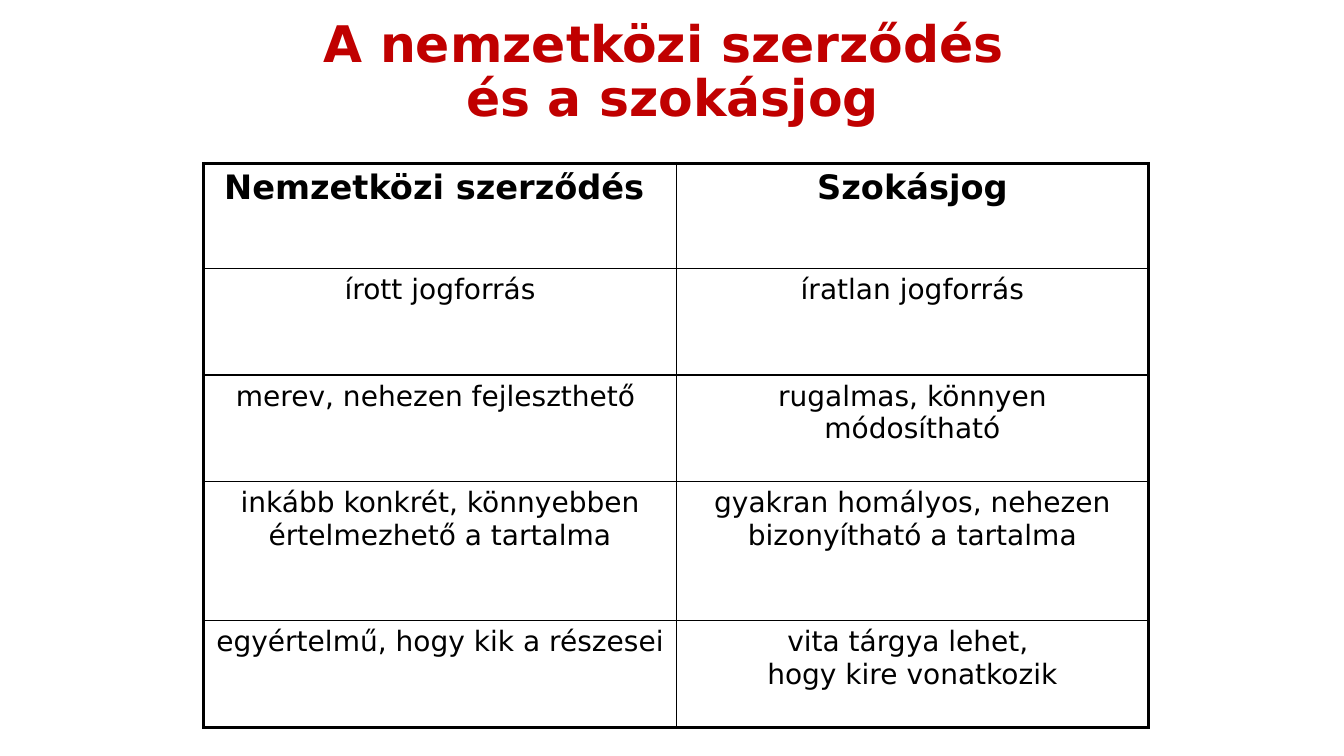
from lxml import etree
from pptx import Presentation
from pptx.dml.color import RGBColor
from pptx.enum.text import MSO_ANCHOR, PP_ALIGN
from pptx.oxml.ns import qn
from pptx.util import Inches, Pt

CENTER = PP_ALIGN.CENTER
MIDDLE = MSO_ANCHOR.MIDDLE
TITLE_ONLY = 5
FONT = "DejaVu Sans"
RED = "C00000"
BLACK = "000000"
OUTER, INNER = 2.25, 1

COLUMN_WIDTHS = [4.69, 4.68]
ROW_HEIGHTS = [1.04, 1.06, 1.06, 1.38, 1.06]
COMPARISON = [
    ("Nemzetközi szerződés ", "Szokásjog"),
    ("írott jogforrás", "íratlan jogforrás"),
    ("merev, nehezen fejleszthető ", "rugalmas, könnyen módosítható"),
    ("inkább konkrét, könnyebben értelmezhető a tartalma",
     "gyakran homályos, nehezen bizonyítható a tartalma"),
    ("egyértelmű, hogy kik a részesei",
     "vita tárgya lehet, \nhogy kire vonatkozik"),
]


def color(value):
    return RGBColor.from_string(value)


def format_text(frame, size, bold, text_color):
    for paragraph in frame.paragraphs:
        paragraph.alignment = CENTER
        paragraph.font.name = FONT
        paragraph.font.size = Pt(size)
        paragraph.font.bold = bold
        paragraph.font.color.rgb = color(text_color)


def add_title(slide, text):
    title = slide.shapes.title
    title.left, title.top = Inches(1.67), Inches(0)
    title.width, title.height = Inches(10), Inches(1.45)
    frame = title.text_frame
    frame.text = text
    frame.word_wrap = True
    frame.vertical_anchor = MIDDLE
    format_text(frame, 36, True, RED)
    frame.paragraphs[0].line_spacing = 0.9


def set_borders(cell, widths):
    properties = cell._tc.get_or_add_tcPr()
    for side, width in zip("LRTB", widths):
        line = etree.SubElement(properties, qn(f"a:ln{side}"), w=str(Pt(width)))
        fill = etree.SubElement(line, qn("a:solidFill"))
        etree.SubElement(fill, qn("a:srgbClr"), val=BLACK)


def add_comparison(slide, rows):
    row_count, column_count = len(rows), len(rows[0])
    table = slide.shapes.add_table(
        row_count, column_count, Inches(2.02), Inches(1.62),
        Inches(sum(COLUMN_WIDTHS)), Inches(sum(ROW_HEIGHTS))).table
    table.horz_banding = False
    table.first_row = False
    for column, width in zip(table.columns, COLUMN_WIDTHS):
        column.width = Inches(width)
    for row, height in zip(table.rows, ROW_HEIGHTS):
        row.height = Inches(height)
    for r, texts in enumerate(rows):
        for c, text in enumerate(texts):
            cell = table.cell(r, c)
            cell.text = text
            is_header = r == 0
            format_text(cell.text_frame, 24 if is_header else 20, is_header, BLACK)
            at_edge = (c == 0, c == column_count - 1, r == 0, r == row_count - 1)
            set_borders(cell, [OUTER if edge else INNER for edge in at_edge])
            cell.fill.background()


def main():
    presentation = Presentation()
    presentation.slide_width = Inches(13.33)
    presentation.slide_height = Inches(7.5)
    slide = presentation.slides.add_slide(presentation.slide_layouts[TITLE_ONLY])
    add_title(slide, "A nemzetközi szerződés \vés a szokásjog")
    add_comparison(slide, COMPARISON)
    presentation.save("out.pptx")


if __name__ == "__main__":
    main()
